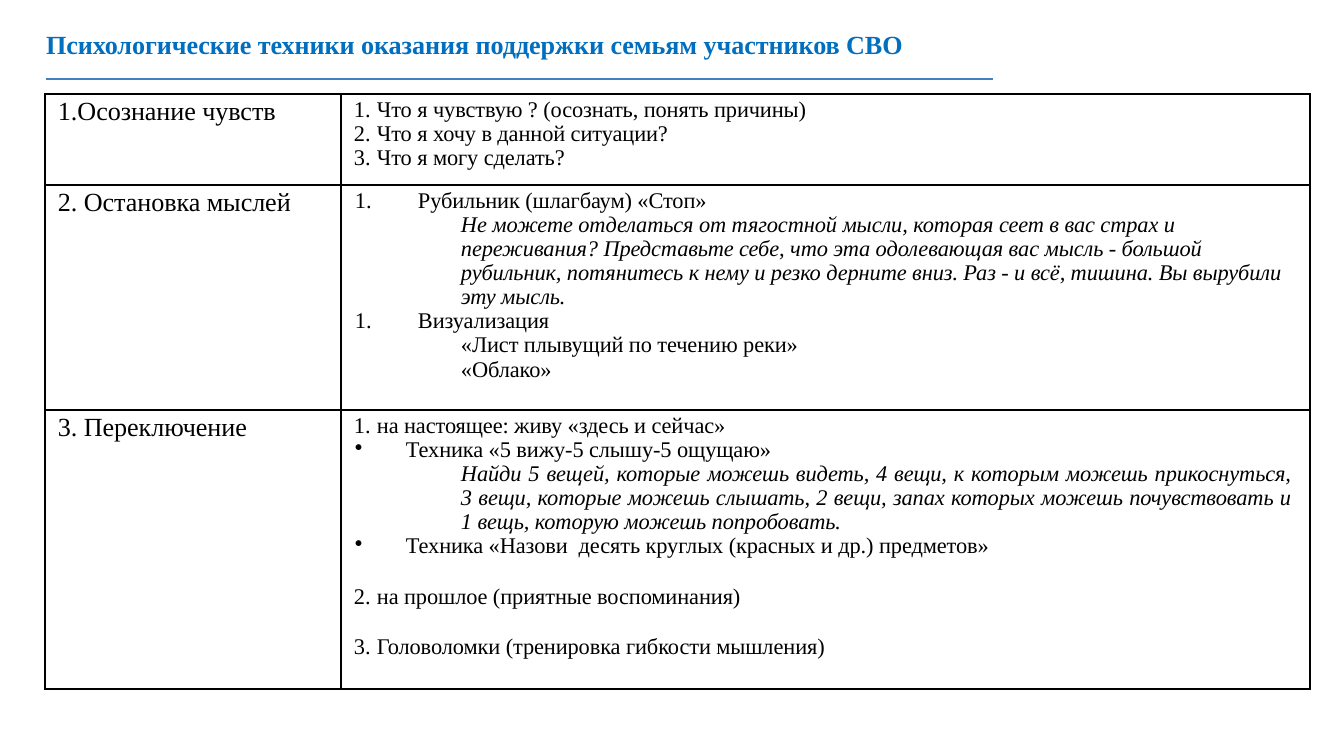
from dataclasses import dataclass

from lxml import etree
from pptx import Presentation
from pptx import util as u
from pptx.dml.color import RGBColor
from pptx.enum import shapes, text
from pptx.oxml import ns

PX_PER_INCH = 134.4
FONT = "Times New Roman"
COLORS = {"title": "006FC0", "rule": "4480C2", "ink": "000000"}


def px(n: int) -> u.Emu:
    return u.Emu(round(n * 914400 / PX_PER_INCH))


@dataclass(frozen=True)
class Style:
    left: int
    hanging: int = 0
    size: int = 12
    level: int = 0
    italic: bool = False
    bullet: str = ""  # "" for none, "1." for numbers, otherwise the character


@dataclass(frozen=True)
class Line:
    words: str
    style: Style
    before: float = 0
    justify: bool = False
    start: int = 1


HEADING = Style(13, size=14)
NUMBERED = Style(36, 23, bullet="1.")
TABBED = Style(77, 63)
DOTTED = Style(65, 51, level=1, bullet="•")
EXAMPLE = Style(120)
EXERCISE = Style(120, italic=True)

TECHNIQUES = [
    (91, "1.Осознание чувств", [
        Line("Что я чувствую ? (осознать, понять причины)", NUMBERED, 2.4),
        Line("Что я хочу в данной ситуации?", NUMBERED),
        Line("Что я могу сделать?", NUMBERED),
    ]),
    (225, "2. Остановка мыслей", [
        Line("1.\tРубильник (шлагбаум) «Стоп»", TABBED, 2.4),
        Line("Не можете отделаться от тягостной мысли, которая сеет в вас страх и "
             "переживания? Представьте себе, что эта одолевающая вас мысль - большой "
             "рубильник, потянитесь к нему и резко дерните вниз. Раз - и всё, тишина. "
             "Вы вырубили эту мысль.", EXERCISE),
        Line("1.\tВизуализация", TABBED),
        Line("«Лист плывущий по течению реки»", EXAMPLE),
        Line("«Облако»", EXAMPLE),
    ]),
    (279, "3. Переключение", [
        Line("на настоящее: живу «здесь и сейчас»", NUMBERED, 2.4, True),
        Line("Техника «5 вижу-5 слышу-5 ощущаю»", DOTTED, 0, True),
        Line("Найди 5 вещей, которые можешь видеть, 4 вещи, к которым можешь "
             "прикоснуться, 3 вещи, которые можешь слышать, 2 вещи, запах которых "
             "можешь почувствовать и 1 вещь, которую можешь попробовать.",
             EXERCISE, 0, True),
        Line("Техника «Назови  десять круглых (красных и др.) предметов»",
             DOTTED, 0, True),
        Line("на прошлое (приятные воспоминания)", NUMBERED, 14, True, 2),
        Line("Головоломки (тренировка гибкости мышления)", NUMBERED, 14, True, 2),
    ]),
]


def format_run(run, size: int, color: str, bold: bool = False,
               italic: bool = False) -> None:
    run.font.name = FONT
    run.font.size = u.Pt(size)
    run.font.bold = bold
    run.font.italic = italic
    run.font.color.rgb = RGBColor.from_string(COLORS[color])
    run.font._element.set("spc", "-5")


def write_line(paragraph, line: Line) -> None:
    style = line.style
    paragraph.text = line.words
    paragraph.level = style.level
    paragraph.alignment = (text.PP_ALIGN.JUSTIFY if line.justify
                           else text.PP_ALIGN.LEFT)
    paragraph.space_before = u.Pt(line.before)
    paragraph.line_spacing = 0.97
    for run in paragraph.runs:
        format_run(run, style.size, "ink", italic=style.italic)
    # Indents and list marks
    props = paragraph._p.get_or_add_pPr()
    props.set("marL", str(px(style.left)))
    props.set("indent", str(-px(style.hanging)))
    if style.bullet == "1.":
        mark = etree.SubElement(props, ns.qn("a:buAutoNum"), type="arabicPeriod")
        if line.start > 1:
            mark.set("startAt", str(line.start))
    elif style.bullet:
        etree.SubElement(props, ns.qn("a:buChar"), char=style.bullet)
    else:
        etree.SubElement(props, ns.qn("a:buNone"))


def draw_borders(cell) -> None:
    props = cell._tc.get_or_add_tcPr()
    for position, side in enumerate(("lnL", "lnR", "lnT", "lnB")):
        border = etree.Element(ns.qn(f"a:{side}"), w=str(u.Pt(1)))
        fill = etree.SubElement(border, ns.qn("a:solidFill"))
        etree.SubElement(fill, ns.qn("a:srgbClr"), val=COLORS["ink"])
        props.insert(position, border)


def fill_cell(cell, lines: list[Line], right: int = 0) -> None:
    cell.margin_left = cell.margin_bottom = 0
    cell.margin_top = px(4)
    cell.margin_right = px(right)
    cell.vertical_anchor = text.MSO_ANCHOR.TOP
    cell.fill.background()
    draw_borders(cell)
    frame = cell.text_frame
    for i, line in enumerate(lines):
        write_line(frame.add_paragraph() if i else frame.paragraphs[0], line)


def add_heading(slide) -> None:
    heading = slide.shapes.title
    heading.left, heading.top, heading.width, heading.height = map(
        px, (44, 27, 976, 34))
    frame = heading.text_frame
    frame.text = "Психологические техники оказания поддержки семьям участников СВО"
    frame.margin_left = px(2)
    frame.margin_right = frame.margin_bottom = 0
    frame.margin_top = px(1)
    frame.word_wrap = True
    frame.auto_size = text.MSO_AUTO_SIZE.NONE
    frame.vertical_anchor = text.MSO_ANCHOR.TOP
    line = frame.paragraphs[0]
    line.alignment = text.PP_ALIGN.LEFT
    line.space_before = u.Pt(1)
    format_run(line.runs[0], 14, "title", bold=True)

    # Rule under the title
    rule = slide.shapes.add_connector(
        shapes.MSO_CONNECTOR.STRAIGHT, px(46), px(79), px(993), px(79))
    rule.line.color.rgb = RGBColor.from_string(COLORS["rule"])
    rule.line.width = u.Pt(1.5)
    etree.SubElement(rule._element.spPr, ns.qn("a:effectLst"))


def add_techniques(slide) -> None:
    widths = (296, 969)
    height = sum(row_height for row_height, _, _ in TECHNIQUES)
    table = slide.shapes.add_table(
        len(TECHNIQUES), len(widths), px(45), px(94),
        px(sum(widths)), px(height)).table
    table.first_row = table.horz_banding = False
    for column, width in zip(table.columns, widths):
        column.width = px(width)
    for i, (row_height, technique, steps) in enumerate(TECHNIQUES):
        table.rows[i].height = px(row_height)
        fill_cell(table.cell(i, 0), [Line(technique, HEADING, 2.3)])
        fill_cell(table.cell(i, 1), steps, right=18)


def main() -> None:
    deck = Presentation()
    deck.slide_width, deck.slide_height = px(1344), px(756)
    slide = deck.slides.add_slide(deck.slide_layouts[5])
    add_heading(slide)
    add_techniques(slide)
    deck.save("out.pptx")


if __name__ == "__main__":
    main()
